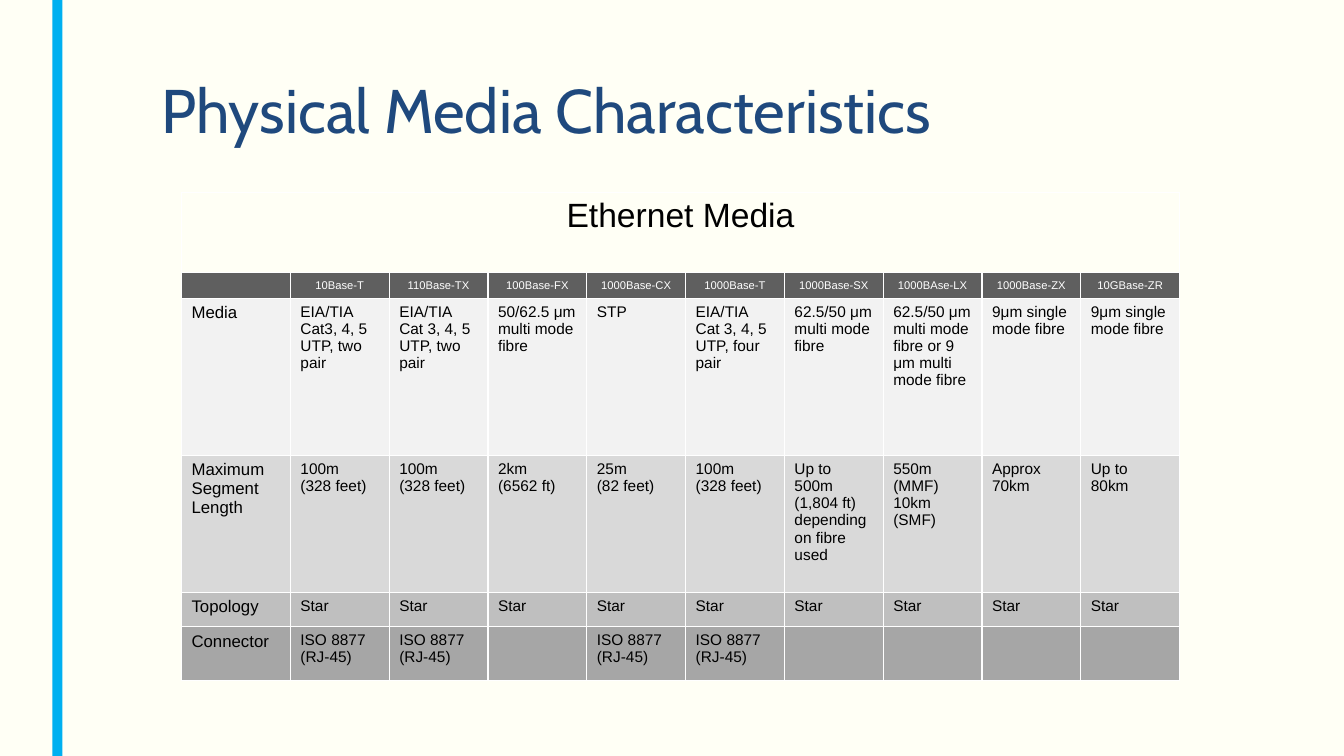
"""Build the slide comparing physical Ethernet media."""
from lxml.etree import SubElement
from pptx import Presentation
from pptx.dml.color import RGBColor
from pptx.enum.shapes import MSO_SHAPE
from pptx.enum.text import MSO_ANCHOR as Anchor, PP_ALIGN as Align
from pptx.oxml.ns import qn
from pptx.util import Inches, Pt

CREAM = RGBColor(0xFF, 0xFF, 0xF5)
SKY = RGBColor(0x00, 0xB0, 0xF0)
NAVY = RGBColor(0x1F, 0x49, 0x7D)
BLACK = RGBColor(0x00, 0x00, 0x00)
WHITE = RGBColor(0xFF, 0xFF, 0xFF)
ROW_FILLS = [RGBColor(level, level, level) for level in (0x5F, 0xF2, 0xD9, 0xBF, 0xA6)]

ROW_HEIGHTS = [0.79, 0.26, 1.56, 1.36, 0.34, 0.53]
COLUMN_WIDTHS = [1.08] + [0.98] * 9
RJ45 = "ISO 8877\n(RJ-45)"
SINGLE_MODE = "9μm single mode fibre"
COPPER_LENGTH = "100m\n(328 feet)"
ROWS = [
    ["", "10Base-T", "110Base-TX", "100Base-FX", "1000Base-CX", "1000Base-T",
     "1000Base-SX", "1000BAse-LX", "1000Base-ZX", "10GBase-ZR"],
    ["Media", "EIA/TIA\nCat3, 4, 5 UTP, two pair", "EIA/TIA\nCat 3, 4, 5 UTP, two pair",
     "50/62.5 μm multi mode fibre", "STP", "EIA/TIA\nCat 3, 4, 5 UTP, four pair",
     "62.5/50 μm multi mode fibre", "62.5/50 μm multi mode fibre or 9 μm multi mode fibre",
     SINGLE_MODE, SINGLE_MODE],
    ["Maximum Segment Length", COPPER_LENGTH, COPPER_LENGTH, "2km\n(6562 ft)",
     "25m\n(82 feet)", COPPER_LENGTH, "Up to 500m\n(1,804 ft)\ndepending on fibre used",
     "550m (MMF)\n10km\n(SMF)", "Approx 70km", "Up to 80km"],
    ["Topology"] + ["Star"] * 9,
    ["Connector", RJ45, RJ45, "", RJ45, RJ45] + [""] * 4,
]


def write(text_frame, text, size, color, font_name="Arial", align=Align.LEFT):
    """Fill a text frame and format each of its paragraphs."""
    text_frame.text = text
    for paragraph in text_frame.paragraphs:
        paragraph.alignment = align
        for run in paragraph.runs:
            for name, value in {"size": Pt(size), "name": font_name}.items():
                setattr(run.font, name, value)
            run.font.color.rgb = color
        if not paragraph.runs:
            SubElement(paragraph._p, qn("a:endParaRPr"), sz=str(size * 100))


def add_borders(cell):
    """Draw white one-point lines around a cell."""
    properties = cell._tc.get_or_add_tcPr()
    for side in ("a:lnL", "a:lnR", "a:lnT", "a:lnB"):
        line = SubElement(properties, qn(side), w=str(Pt(1)))
        SubElement(SubElement(line, qn("a:solidFill")), qn("a:srgbClr"), val=str(WHITE))


presentation = Presentation()
presentation.slide_width = Inches(13.33)
presentation.slide_height = Inches(7.5)
slide = presentation.slides.add_slide(presentation.slide_layouts[6])
slide.background.fill.solid()
slide.background.fill.fore_color.rgb = CREAM

stripe = slide.shapes.add_shape(
    MSO_SHAPE.RECTANGLE, Inches(0.52), 0, Inches(0.1), presentation.slide_height)
stripe.shadow.inherit = False
stripe.fill.solid()
stripe.fill.fore_color.rgb = SKY
stripe.line.fill.background()

title = slide.shapes.add_textbox(Inches(1.5), Inches(0.75), Inches(10.5), Inches(1.16))
title.text_frame.word_wrap = True
write(title.text_frame, "Physical Media Characteristics", 44, NAVY, "Cabin")
title.text_frame.paragraphs[0].line_spacing = 0.89

table = slide.shapes.add_table(
    len(ROW_HEIGHTS), len(COLUMN_WIDTHS), Inches(1.8), Inches(1.91),
    Inches(sum(COLUMN_WIDTHS)), Inches(sum(ROW_HEIGHTS))).table
table.first_row = False
table.horz_banding = False
for column, width in zip(table.columns, COLUMN_WIDTHS):
    column.width = Inches(width)
for row, height in zip(table.rows, ROW_HEIGHTS):
    row.height = Inches(height)
for cell in table.iter_cells():
    add_borders(cell)

banner = table.cell(0, 0)
banner.merge(table.cell(0, len(COLUMN_WIDTHS) - 1))
banner.fill.background()
write(banner.text_frame, "Ethernet Media", 24, BLACK, align=Align.CENTER)

for row_index, (texts, fill_color) in enumerate(zip(ROWS, ROW_FILLS), start=1):
    for column_index, text in enumerate(texts):
        cell = table.cell(row_index, column_index)
        cell.fill.solid()
        cell.fill.fore_color.rgb = fill_color
        if row_index == 1:
            cell.vertical_anchor = Anchor.MIDDLE
            write(cell.text_frame, text, 8, WHITE, align=Align.CENTER)
        else:
            write(cell.text_frame, text, 12 if column_index == 0 else 11, BLACK)

presentation.save("out.pptx")
